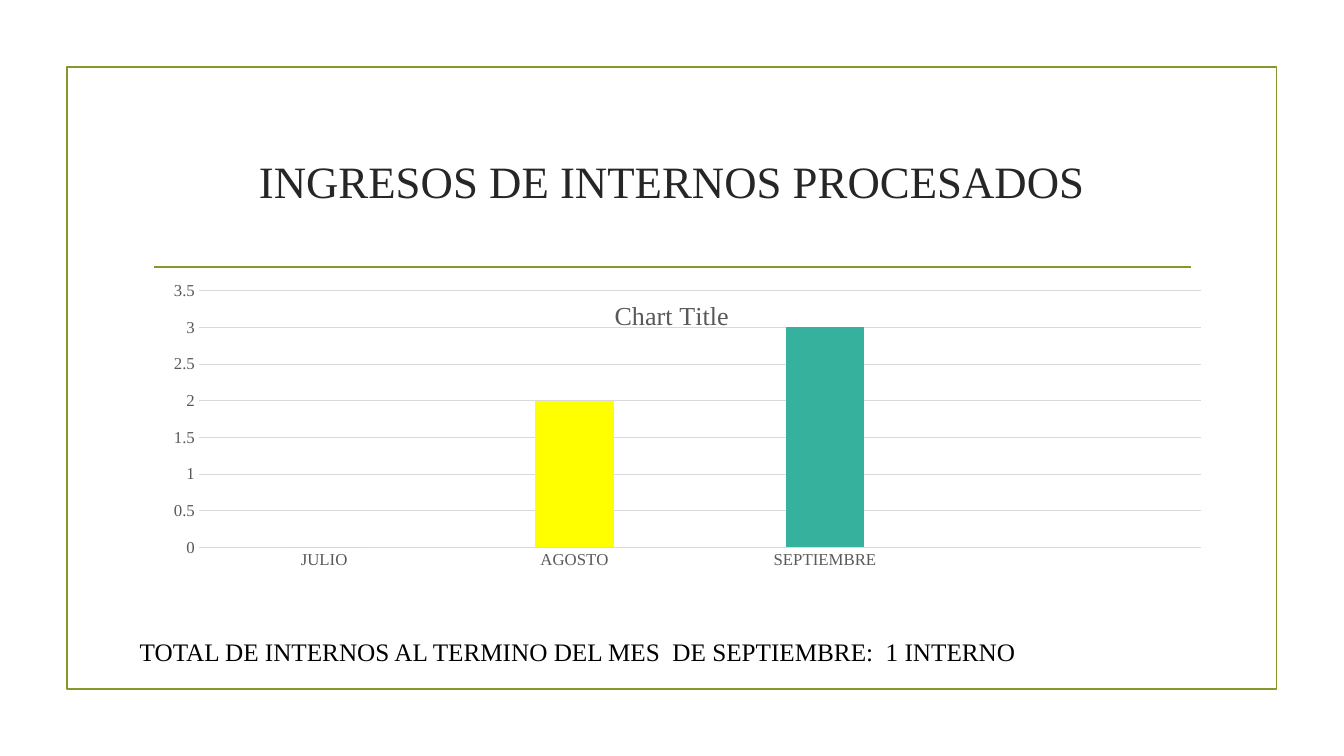
from lxml import etree
from pptx import Presentation
from pptx.chart.data import CategoryChartData
from pptx.dml.color import RGBColor
from pptx.enum.chart import XL_CHART_TYPE, XL_TICK_MARK
from pptx.enum.shapes import MSO_CONNECTOR, MSO_SHAPE
from pptx.enum.text import MSO_ANCHOR, PP_ALIGN
from pptx.oxml import parse_xml
from pptx.oxml.ns import nsdecls, qn
from pptx.util import Pt

TITLE = "INGRESOS DE INTERNOS PROCESADOS"
CHART_TITLE = "Chart Title"
TOTAL = "TOTAL DE INTERNOS AL TERMINO DEL MES  DE SEPTIEMBRE:  1 INTERNO"
MONTHS = ("JULIO", "AGOSTO", "SEPTIEMBRE", "")
SERIES = {"Series 1": (0, 2, 3, None), "Series 2": ()}

FONT = "Times New Roman"
OLIVE = RGBColor(0x83, 0x99, 0x2A)
INK = RGBColor(0x26, 0x26, 0x26)
BLACK = RGBColor(0, 0, 0)
GRAY = RGBColor(0x59, 0x59, 0x59)
GRID = RGBColor(0xD9, 0xD9, 0xD9)
SERIES_COLORS = (RGBColor(0xFF, 0xC0, 0x00), RGBColor(0x44, 0x70, 0x9D))
POINT_COLORS = {1: RGBColor(0xFF, 0xFF, 0x00), 2: RGBColor(0x35, 0xB1, 0x9D)}

SLIDE_WIDTH, SLIDE_HEIGHT = 960, 540
CONTENT_LEFT, CONTENT_WIDTH = 102, 756
PLOT_LAYOUT = {"x": 0.053, "y": 0.023, "w": 0.947, "h": 0.771}


def style_font(font, size, color):
    font.name = FONT
    font.size = Pt(size)
    font.color.rgb = color


def style_line(line, color, width):
    line.color.rgb = color
    line.width = Pt(width)


def style_fill(fill, color):
    fill.solid()
    fill.fore_color.rgb = color


def add_frame(slide):
    frame = slide.shapes.add_shape(
        MSO_SHAPE.RECTANGLE, Pt(47.8), Pt(48), Pt(864), Pt(444))
    frame.shadow.inherit = False
    frame.fill.background()
    style_line(frame.line, OLIVE, 1.25)
    rule = slide.shapes.add_connector(
        MSO_CONNECTOR.STRAIGHT, Pt(110), Pt(190.8), Pt(850.5), Pt(190.8))
    style_line(rule.line, OLIVE, 1.25)
    etree.SubElement(rule.element.spPr, qn("a:effectLst"))


def format_title(title):
    title.left, title.top = Pt(CONTENT_LEFT), Pt(77.4)
    title.width, title.height = Pt(CONTENT_WIDTH), Pt(103)
    title.text_frame.text = TITLE
    title.text_frame.vertical_anchor = MSO_ANCHOR.MIDDLE
    paragraph = title.text_frame.paragraphs[0]
    paragraph.alignment = PP_ALIGN.CENTER
    style_font(paragraph.font, 32, INK)


def set_plot_layout(chart):
    """Fix the inner plot area as fractions of the chart."""
    modes = "".join(f'<c:{side}Mode val="edge"/>' for side in "xy")
    values = "".join(f'<c:{key} val="{value}"/>' for key, value in PLOT_LAYOUT.items())
    layout = parse_xml(
        f'<c:layout {nsdecls("c")}><c:manualLayout><c:layoutTarget val="inner"/>'
        f'{modes}{values}</c:manualLayout></c:layout>')
    plot_area = chart.element.find(f'.//{qn("c:plotArea")}')
    for old_layout in plot_area.findall(qn("c:layout")):
        plot_area.remove(old_layout)
    plot_area.insert(0, layout)


def drop_blank_points(chart):
    """Leave the unnamed month and the unfilled series without stored points."""
    for category in list(chart.element.iter(qn("c:cat"))):
        for point in list(category.iter(qn("c:pt"))):
            if not point.findtext(qn("c:v")):
                point.getparent().remove(point)
    for values in list(chart.element.iter(qn("c:val"))):
        if values.find(f'.//{qn("c:pt")}') is None:
            values.getparent().remove(values)


def add_admissions_chart(slide):
    data = CategoryChartData()
    data.categories = MONTHS
    for name, values in SERIES.items():
        data.add_series(name, values)
    chart = slide.shapes.add_chart(
        XL_CHART_TYPE.COLUMN_CLUSTERED, Pt(CONTENT_LEFT), Pt(201.3),
        Pt(CONTENT_WIDTH), Pt(238.8), data).chart
    style_font(chart.font, 10, BLACK)
    chart.has_legend = False
    chart.has_title = True
    chart.chart_title.include_in_layout = True
    chart.chart_title.text_frame.text = CHART_TITLE
    title_font = chart.chart_title.text_frame.paragraphs[0].font
    style_font(title_font, 18.6, GRAY)
    title_font.bold = False
    set_plot_layout(chart)
    drop_blank_points(chart)

    plot = chart.plots[0]
    plot.gap_width, plot.overlap = 219, -27
    plot.vary_by_categories = False
    for series, color in zip(plot.series, SERIES_COLORS):
        style_fill(series.format.fill, color)
    for index, color in POINT_COLORS.items():
        style_fill(plot.series[0].points[index].format.fill, color)

    for axis in (chart.category_axis, chart.value_axis):
        axis.major_tick_mark = axis.minor_tick_mark = XL_TICK_MARK.NONE
        style_font(axis.tick_labels.font, 12, GRAY)
    style_line(chart.category_axis.format.line, GRID, 0.75)
    value_axis = chart.value_axis
    value_axis.minimum_scale, value_axis.maximum_scale = 0, 3.5
    value_axis.major_unit = 0.5
    value_axis.format.line.fill.background()
    style_line(value_axis.major_gridlines.format.line, GRID, 0.75)


def add_total(slide):
    box = slide.shapes.add_textbox(Pt(92.7), Pt(451), Pt(790), Pt(29))
    box.text_frame.word_wrap = True
    box.text_frame.text = TOTAL
    style_font(box.text_frame.paragraphs[0].font, 18, BLACK)


def main():
    presentation = Presentation()
    presentation.slide_width = Pt(SLIDE_WIDTH)
    presentation.slide_height = Pt(SLIDE_HEIGHT)
    slide = presentation.slides.add_slide(presentation.slide_layouts[5])
    add_frame(slide)
    format_title(slide.shapes.title)
    add_admissions_chart(slide)
    add_total(slide)
    presentation.save("out.pptx")


if __name__ == "__main__":
    main()
